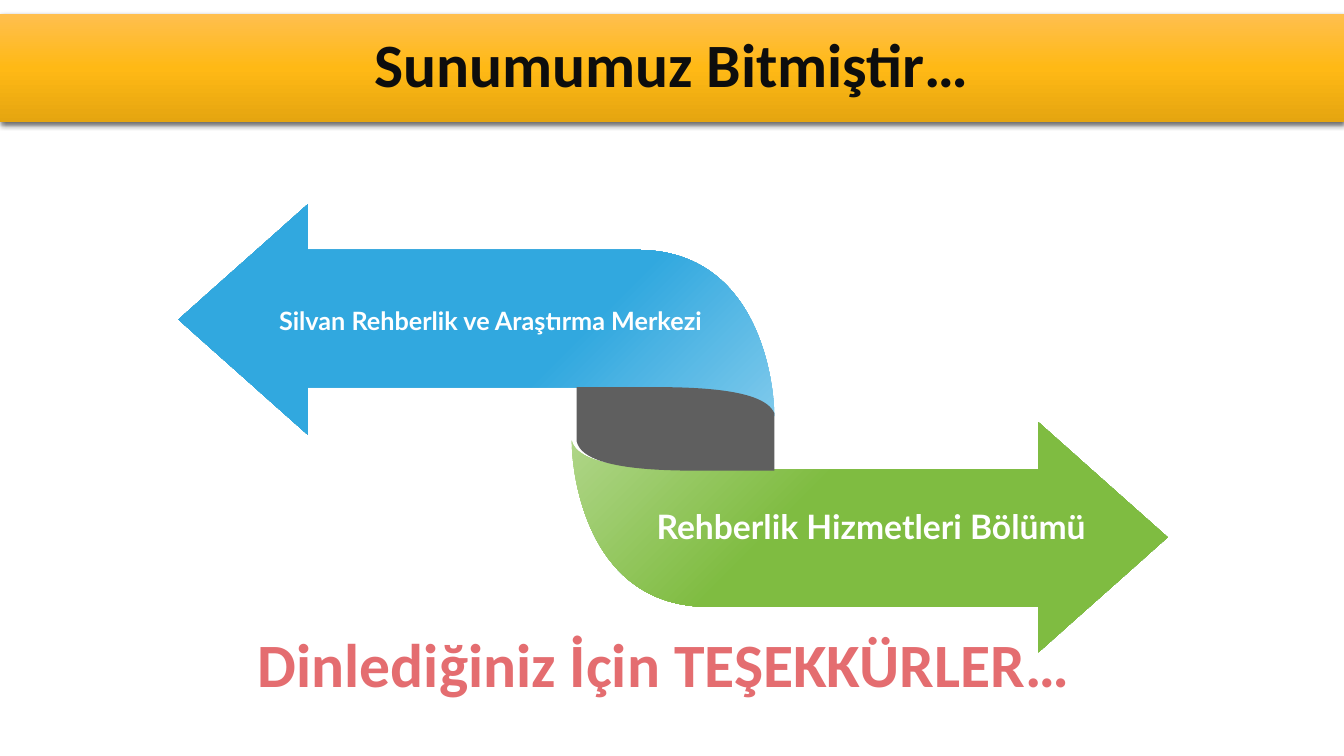
from copy import deepcopy
from dataclasses import dataclass

from lxml.etree import Element, SubElement
from pptx import Presentation
from pptx.dml.color import RGBColor
from pptx.enum.shapes import MSO_SHAPE
from pptx.enum.text import MSO_ANCHOR, MSO_AUTO_SIZE, PP_ALIGN
from pptx.oxml.ns import qn
from pptx.util import Inches, Pt

Step = tuple[float, ...]
Stops = list[tuple[int, str]]

CENTER = (6.675, 4.25)


@dataclass
class Ribbon:
    start: Step
    steps: list[Step]
    stops: Stops
    angle: int = 0


@dataclass
class Label:
    text: str
    box: tuple[float, float, float, float]
    size: int
    face: str
    color: str
    align: PP_ALIGN
    wrap: bool = False


def color(code: str) -> RGBColor:
    return RGBColor.from_string(code)


def apply(target, values: dict) -> None:
    for name, value in values.items():
        setattr(target, name, value)


def paint(shape, stops: Stops, angle: int) -> None:
    shape.shadow.inherit = False
    shape.line.fill.background()
    fill = shape.fill
    if len(stops) == 1:
        fill.solid()
        fill.fore_color.rgb = color(stops[0][1])
        return
    fill.gradient()
    fill.gradient_angle = (360 - angle) % 360
    items = shape._element.spPr.find(".//" + qn("a:gsLst"))
    while len(items) < len(stops):
        items.append(deepcopy(items[-1]))
    for stop, (place, code) in zip(fill.gradient_stops, stops):
        stop.position = place / 100
        stop.color.rgb = color(code)


def rotate(step: Step) -> Step:
    return tuple(2 * CENTER[i % 2] - value for i, value in enumerate(step))


def bend(shape, steps: list[Step]) -> None:
    nodes = shape._element.spPr.findall(".//" + qn("a:lnTo"))
    for node, step in zip(nodes, steps):
        if len(step) == 2:
            continue
        node.tag = qn("a:cubicBezTo")
        for i in (0, 1):
            x, y = step[2 * i:2 * i + 2]
            node.insert(i, Element(qn("a:pt"), x=str(Inches(x) - shape.left),
                                   y=str(Inches(y) - shape.top)))


def draw_ribbon(slide, ribbon: Ribbon) -> None:
    builder = slide.shapes.build_freeform(*map(Inches, ribbon.start))
    ends = [tuple(map(Inches, step[-2:])) for step in ribbon.steps]
    builder.add_line_segments(ends, close=True)
    shape = builder.convert_to_shape()
    bend(shape, ribbon.steps)
    paint(shape, ribbon.stops, ribbon.angle)


def write(shape, label: Label) -> None:
    para = shape.text_frame.paragraphs[0]
    para.alignment = label.align
    run = para.add_run()
    run.text = label.text
    apply(run.font, {"name": label.face, "size": Pt(label.size), "bold": True})
    run.font.color.rgb = color(label.color)


def draw_label(slide, label: Label) -> None:
    box = slide.shapes.add_textbox(*map(Inches, label.box))
    apply(box.text_frame, {
        "word_wrap": label.wrap,
        "auto_size": MSO_AUTO_SIZE.SHAPE_TO_FIT_TEXT,
    })
    write(box, label)


def draw_banner(slide, label: Label, stops: Stops) -> None:
    banner = slide.shapes.add_shape(MSO_SHAPE.RECTANGLE, *map(Inches, label.box))
    paint(banner, stops, 90)
    effects = banner._element.spPr.find(qn("a:effectLst"))
    shadow = SubElement(effects, qn("a:outerShdw"), blurRad=str(Pt(4.5)),
                        dist=str(Pt(1.5)), dir="5400000", rotWithShape="0")
    black = SubElement(shadow, qn("a:srgbClr"), val="000000")
    SubElement(black, qn("a:alpha"), val="63000")
    apply(banner.text_frame, {
        "vertical_anchor": MSO_ANCHOR.MIDDLE,
        "word_wrap": label.wrap,
    })
    write(banner, label)
    banner.text_frame.paragraphs[0].line_spacing = 0.9


BLUE = Ribbon((6.32, 2.48), [
    (3.05, 2.48), (3.05, 2.03), (1.77, 3.17), (3.05, 4.31), (3.05, 3.84),
    (6.32, 3.84),
    (6.76, 3.84, 7.61, 3.83, 7.68, 4.13),
    (7.68, 3.84, 7.55, 2.48, 6.32, 2.48),
], [(0, "83CBEC"), (36, "31A8DF")], 225)

GREEN = Ribbon(rotate(BLUE.start), [rotate(step) for step in BLUE.steps],
               [(0, "B2D78C"), (38, "7FBC41")], 45)

FOLD = Ribbon((7.08, 4.67), [
    (7.68, 4.67), (7.68, 4.1),
    (7.57, 3.83, 6.75, 3.84, 6.33, 3.84),
    (5.72, 3.84), (5.72, 4.38),
    (5.79, 4.68, 6.65, 4.67, 7.08, 4.67),
], [(0, "5F5F5F")])

LABELS = [
    Label("Rehberlik Hizmetleri Bölümü", (6.25, 4.97, 4.78, 0.5),
          24, "Lato", "FFFFFF", PP_ALIGN.CENTER),
    Label("Silvan Rehberlik ve Araştırma Merkezi", (2.31, 2.98, 4.75, 0.4),
          18, "Lato", "FFFFFF", PP_ALIGN.RIGHT),
]
TITLE = Label("Sunumumuz Bitmiştir…", (0, 0.14, 13.33, 1.07),
              44, "Calibri", "0D0D0D", PP_ALIGN.CENTER, True)
GOLD = [(0, "FFBF4E"), (50, "FFB915"), (100, "E5A510")]
THANKS = Label("Dinlediğiniz İçin TEŞEKKÜRLER…", (2.46, 6.16, 9.05, 0.84),
               44, "Calibri", "E46D70", PP_ALIGN.LEFT, True)


def main() -> None:
    deck = Presentation()
    apply(deck, {"slide_width": Inches(13.33), "slide_height": Inches(7.5)})
    slide = deck.slides.add_slide(deck.slide_layouts[6])
    for ribbon in (BLUE, GREEN, FOLD):
        draw_ribbon(slide, ribbon)
    for label in LABELS:
        draw_label(slide, label)
    draw_banner(slide, TITLE, GOLD)
    draw_label(slide, THANKS)
    deck.save("out.pptx")


if __name__ == "__main__":
    main()
